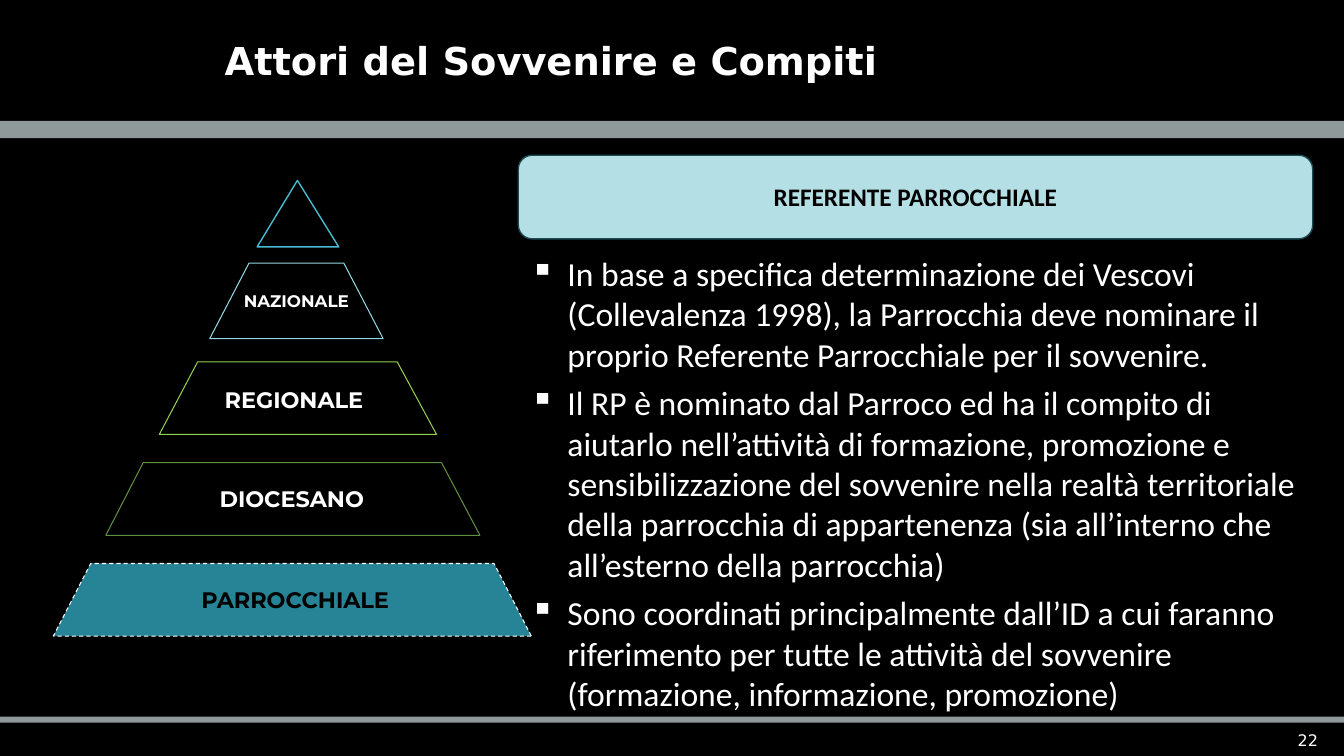
from lxml import etree
from pptx import Presentation
from pptx.dml.color import RGBColor
from pptx.enum import dml, shapes, text
from pptx.oxml.ns import qn
from pptx.util import Inches, Pt

BLACK = RGBColor(0x00, 0x00, 0x00)
WHITE = RGBColor(0xFF, 0xFF, 0xFF)
BAR = RGBColor(0xEA, 0xF7, 0xFA)
HEADING_FILL = RGBColor(0xB3, 0xDF, 0xE5)
HEADING_LINE = RGBColor(0x1C, 0x4C, 0x53)
TIP_LINE = RGBColor(0x49, 0xBB, 0xD1)
NATIONAL_LINE = RGBColor(0x94, 0xD7, 0xE4)
REGIONAL_LINE = RGBColor(0x92, 0xD0, 0x50)
DIOCESAN_LINE = RGBColor(0x60, 0x8F, 0x3D)
PARISH_FILL = RGBColor(0x26, 0x84, 0x96)

prs = Presentation()
prs.slide_width, prs.slide_height = Inches(13.33), Inches(7.5)
slide = prs.slides.add_slide(prs.slide_layouts[6])
slide.background.fill.solid()
slide.background.fill.fore_color.rgb = BLACK


def add_label(wording, box, font, size, color, bold=True, wrap=True,
              align=text.PP_ALIGN.LEFT, anchor=text.MSO_ANCHOR.MIDDLE):
    """Add a text box with one paragraph per line of wording."""
    label = slide.shapes.add_textbox(*map(Inches, box))
    frame = label.text_frame
    frame.text = wording
    frame.word_wrap = wrap
    frame.vertical_anchor = anchor
    for paragraph in frame.paragraphs:
        paragraph.alignment = align
        for run in paragraph.runs:
            run.font.name = font
            run.font.size = Pt(size)
            run.font.bold = bold
            run.font.color.rgb = color
    return frame


def add_pyramid_level(points, line_color, line_width):
    """Draw a closed, unfilled outline through points given in inches."""
    corners = [(Inches(x), Inches(y)) for x, y in points]
    builder = slide.shapes.build_freeform(*corners[0])
    builder.add_line_segments(corners[1:], close=True)
    level = builder.convert_to_shape()
    level.shadow.inherit = False
    level.fill.background()
    level.line.color.rgb = line_color
    level.line.width = Pt(line_width)
    return level


# Header and footer
for top, height in [(1.2, 0.17), (7.11, 0.06)]:
    bar = slide.shapes.add_shape(shapes.MSO_SHAPE.RECTANGLE, Inches(0),
                                 Inches(top), Inches(13.33), Inches(height))
    bar.shadow.inherit = False
    bar.fill.solid()
    bar.fill.fore_color.rgb = BAR
    bar.line.fill.background()
    bar_color = bar.fill._xPr.find(qn("a:solidFill"))[0]
    etree.SubElement(bar_color, qn("a:alpha"), val="62000")

add_label("22", (12.47, 7.18, 0.7, 0.32), "DejaVu Sans", 11.4, WHITE,
          bold=False, align=text.PP_ALIGN.RIGHT)
title = add_label("Attori del Sovvenire e Compiti", (2.13, 0.33, 11.04, 0.6),
                  "DejaVu Sans", 27.4, WHITE)
title.paragraphs[0].line_spacing = 0.9

# Role heading and its tasks
heading = slide.shapes.add_shape(shapes.MSO_SHAPE.ROUNDED_RECTANGLE, Inches(5.14),
                                 Inches(1.54), Inches(7.88), Inches(0.83))
heading.shadow.inherit = False
heading.fill.solid()
heading.fill.fore_color.rgb = HEADING_FILL
heading.line.color.rgb = HEADING_LINE
heading.line.width = Pt(1)
add_label("REFERENTE PARROCCHIALE", (5.72, 1.75, 6.72, 0.4), "Calibri", 18, BLACK,
          align=text.PP_ALIGN.CENTER, anchor=text.MSO_ANCHOR.TOP)

TASKS = [
    "In base a specifica determinazione dei Vescovi (Collevalenza 1998), la Parrocchia "
    "deve nominare il proprio Referente Parrocchiale per il sovvenire.",
    "Il RP è nominato dal Parroco ed ha il compito di aiutarlo nell’attività di "
    "formazione, promozione e sensibilizzazione del sovvenire nella realtà territoriale "
    "della parrocchia di appartenenza (sia all’interno che all’esterno della parrocchia)",
    "Sono coordinati principalmente dall’ID a cui faranno riferimento per tutte le "
    "attività del sovvenire (formazione, informazione, promozione)",
]
tasks = add_label("\n".join(TASKS), (5.16, 2.46, 8.03, 4.71), "Calibri", 24, WHITE,
                  bold=False, anchor=text.MSO_ANCHOR.TOP)
for number, task in enumerate(tasks.paragraphs):
    if number:
        task.space_before = Pt(6)
    properties = task._p.get_or_add_pPr()
    properties.set("marL", str(Inches(0.37)))
    properties.set("indent", str(-Inches(0.37)))
    etree.SubElement(properties, qn("a:buChar"), char="▪")

# Pyramid, from the tip down
add_pyramid_level([(2.95, 1.79), (2.55, 2.45), (3.36, 2.45)], TIP_LINE, 1)

# name, (top, height), (top edge), (bottom edge), line, text box, size, text colour
LEVELS = [
    ("NAZIONALE", (2.61, 0.75), (2.47, 3.41), (2.08, 3.8), NATIONAL_LINE,
     (2.32, 2.83, 1.26, 0.3), 12, WHITE),
    ("REGIONALE", (3.59, 0.72), (1.96, 3.94), (1.58, 4.33), REGIONAL_LINE,
     (2.13, 3.78, 1.59, 0.37), 16, WHITE),
    ("DIOCESANO", (4.59, 0.72), (1.42, 4.38), (1.05, 4.76), DIOCESAN_LINE,
     (2.08, 4.76, 1.65, 0.37), 16, WHITE),
    ("PARROCCHIALE", (5.59, 0.72), (0.9, 4.9), (0.53, 5.27), WHITE,
     (1.9, 5.76, 2.1, 0.37), 16, BLACK),
]
for name, (top, height), upper, lower, line_color, box, size, color in LEVELS:
    bottom = top + height
    level = add_pyramid_level([(lower[1], bottom), (upper[1], top),
                               (upper[0], top), (lower[0], bottom)], line_color, 0.75)
    if name == "PARROCCHIALE":
        level.fill.solid()
        level.fill.fore_color.rgb = PARISH_FILL
        level.line.dash_style = dml.MSO_LINE.DASH
    add_label(name, box, "Montserrat", size, color, wrap=False)

prs.save("out.pptx")
